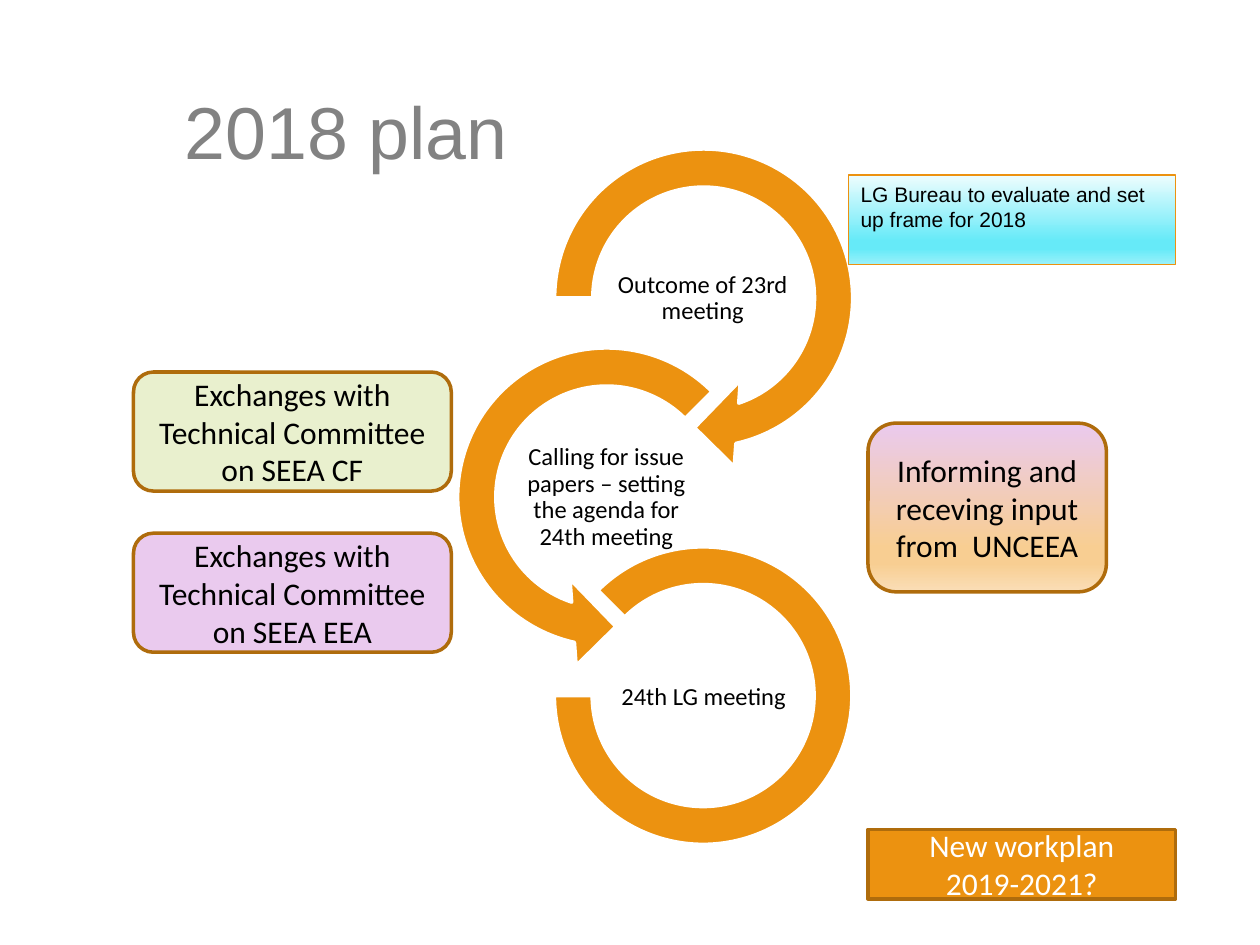
from copy import deepcopy
from dataclasses import dataclass

from pptx import Presentation
from pptx.dml.color import RGBColor
from pptx.enum.shapes import MSO_SHAPE
from pptx.enum.text import MSO_ANCHOR, PP_ALIGN
from pptx.oxml.ns import qn
from pptx.util import Pt

ORANGE, BROWN, BLACK, WHITE = "EC9210", "AF6C0C", "000000", "FFFFFF"
PINK_TO_PEACH = ((0, "EACAEE"), (0.74, "F8CE92"), (0.83, "F8CE92"), (1, "FADEB7"))
PALE_TO_CYAN = ((0, "EEFDFE"), (0.74, "66EAF8"), (0.83, "66EAF8"), (1, "99F1FA"))

Area = tuple[float, float, float, float]
Fill = str | tuple[tuple[float, str], ...]


@dataclass(frozen=True)
class TextStyle:
    size: float
    font: str = "Calibri"
    color: str = BLACK
    align: PP_ALIGN = PP_ALIGN.CENTER
    anchor: MSO_ANCHOR = MSO_ANCHOR.MIDDLE
    line_spacing: float | None = None
    margin: float | None = None


@dataclass(frozen=True)
class Step:
    preset: MSO_SHAPE
    ring: Area
    adjustments: tuple[float, ...]
    label: str
    label_left: float
    label_top: float


@dataclass(frozen=True)
class Box:
    preset: MSO_SHAPE
    area: Area
    fill: Fill
    lines: tuple[str, ...]
    style: TextStyle
    line_color: str = BROWN
    line_width: float = 2


TITLE_STYLE = TextStyle(42, "Arial", "828282", PP_ALIGN.LEFT)
STEP_STYLE = TextStyle(14, line_spacing=0.9, margin=0.7)
BOX_STYLE = TextStyle(18)
PLAN_STYLE = TextStyle(18, color=WHITE)
BUREAU_STYLE = TextStyle(12, "Arial", align=PP_ALIGN.LEFT, anchor=MSO_ANCHOR.TOP)

STEP_LABEL_SIZE = (110.2, 54.7)
STEPS = (
    Step(MSO_SHAPE.CIRCULAR_ARROW, (303.1, 71.3, 198, 198),
         (0.11, 11.423, 45, 108, 0.125), "Outcome of 23rd meeting", 346.5, 143.3),
    Step(MSO_SHAPE.LEFT_CIRCULAR_ARROW, (247.7, 185, 198, 198),
         (0.11, 11.423, 63, 189, 0.125),
         "Calling for issue papers – setting the agenda for 24th meeting", 291.4, 257),
    Step(MSO_SHAPE.BLOCK_ARC, (316.8, 312.5, 170, 170),
         (135, 108, 0.127), "24th LG meeting", 347, 371.5),
)

BOXES = (
    Box(MSO_SHAPE.ROUNDED_RECTANGLE, (496, 241.8, 136.2, 96.4), PINK_TO_PEACH,
        ("Informing and receving input from  UNCEEA",), BOX_STYLE),
    Box(MSO_SHAPE.ROUNDED_RECTANGLE, (76.3, 212.6, 181.6, 68), "E9F0CE",
        ("Exchanges with Technical Committee on SEEA CF",), BOX_STYLE),
    Box(MSO_SHAPE.ROUNDED_RECTANGLE, (76.3, 304.7, 181.6, 68), "EACAEE",
        ("Exchanges with Technical Committee on SEEA EEA",), BOX_STYLE),
    Box(MSO_SHAPE.RECTANGLE, (496, 473.9, 175.8, 39.8), ORANGE,
        ("New workplan", "2019-2021?"), PLAN_STYLE),
    Box(MSO_SHAPE.RECTANGLE, (484.7, 100, 187.1, 51), PALE_TO_CYAN,
        ("LG Bureau to evaluate and set up frame for 2018",), BUREAU_STYLE,
        ORANGE, 0.75),
)


def rgb(color: str) -> RGBColor:
    return RGBColor.from_string(color)


def write_text(shape, lines: tuple[str, ...], style: TextStyle) -> None:
    frame = shape.text_frame
    frame.word_wrap = True
    frame.vertical_anchor = style.anchor
    if style.margin is not None:
        frame.margin_left = frame.margin_right = Pt(style.margin)
        frame.margin_top = frame.margin_bottom = Pt(style.margin)
    for index, line in enumerate(lines):
        paragraph = frame.add_paragraph() if index else frame.paragraphs[0]
        paragraph.alignment = style.align
        if style.line_spacing:
            paragraph.line_spacing = style.line_spacing
        run = paragraph.add_run()
        run.text = line
        run.font.size = Pt(style.size)
        run.font.name = style.font
        run.font.color.rgb = rgb(style.color)


def paint(shape, fill: Fill) -> None:
    """Fill with one colour, or with a gradient running from top to bottom."""
    if isinstance(fill, str):
        shape.fill.solid()
        shape.fill.fore_color.rgb = rgb(fill)
        return
    shape.fill.gradient()
    shape.fill.gradient_angle = 270
    stop_list = next(shape._element.iter(qn("a:gsLst")))
    while len(stop_list) < len(fill):
        stop_list.append(deepcopy(stop_list[0]))
    for stop, (position, color) in zip(shape.fill.gradient_stops, fill):
        stop.position = position
        stop.color.rgb = rgb(color)


def add_outlined(slide, preset: MSO_SHAPE, area: Area, fill: Fill,
                 line_color: str, line_width: float):
    shape = slide.shapes.add_shape(preset, *map(Pt, area))
    shape.shadow.inherit = False
    paint(shape, fill)
    shape.line.color.rgb = rgb(line_color)
    shape.line.width = Pt(line_width)
    return shape


def add_label(slide, area: Area, text: str, style: TextStyle) -> None:
    write_text(slide.shapes.add_textbox(*map(Pt, area)), (text,), style)


def add_step(slide, step: Step) -> None:
    ring = add_outlined(slide, step.preset, step.ring, ORANGE, WHITE, 2)
    for index, value in enumerate(step.adjustments):
        ring.adjustments[index] = value
    add_label(slide, (step.label_left, step.label_top, *STEP_LABEL_SIZE),
              step.label, STEP_STYLE)


def add_box(slide, box: Box) -> None:
    shape = add_outlined(slide, box.preset, box.area, box.fill,
                         box.line_color, box.line_width)
    write_text(shape, box.lines, box.style)


def main() -> None:
    presentation = Presentation()
    presentation.slide_width, presentation.slide_height = Pt(720), Pt(540)
    slide = presentation.slides.add_slide(presentation.slide_layouts[6])
    add_label(slide, (98.6, 29.5, 585.4, 90), "2018 plan", TITLE_STYLE)
    for step in STEPS:
        add_step(slide, step)
    for box in BOXES:
        add_box(slide, box)
    presentation.save("out.pptx")


if __name__ == "__main__":
    main()
